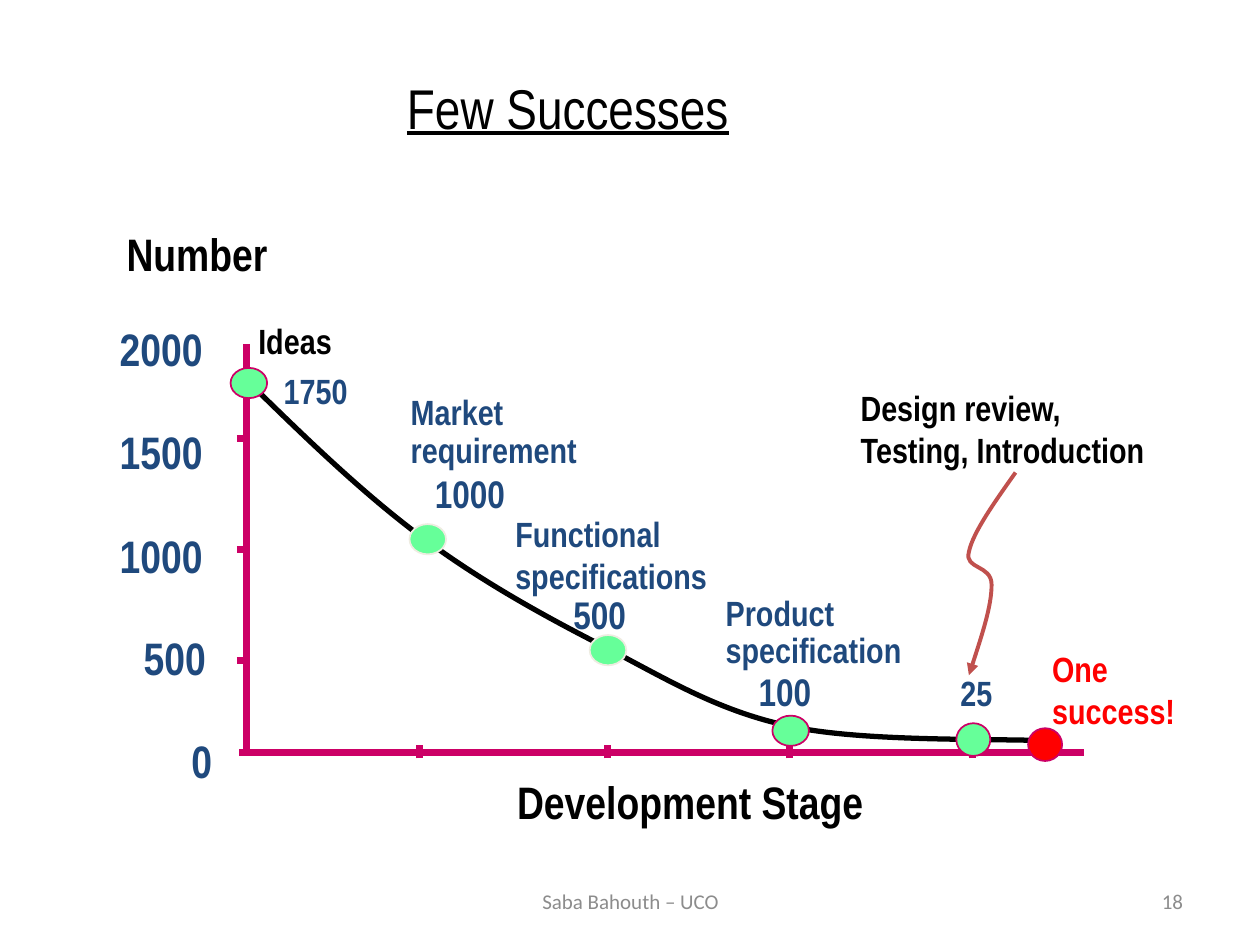
import pptx
import pptx.dml.color
import pptx.enum.shapes
import pptx.enum.text
import pptx.oxml.ns
import pptx.util
from lxml import etree

PX = 9144
NARROW = "Arial Narrow"
BLACK, NAVY, RED = "000000", "1F497D", "FF0000"
MAGENTA, GREEN, CREAM = "CC0066", "66FF99", "EEECE1"
BRICK, GREY = "C0504D", "8C8C8C"
ALIGN = pptx.enum.text.PP_ALIGN
ANCHOR = pptx.enum.text.MSO_ANCHOR
LABELS = [
    ((144, 341, 416, 49), ["Development Stage"], 26, BLACK, ALIGN.CENTER, 0.9, True),
    ((-131, -94, 183, 49), ["Number"], 26, BLACK, ALIGN.CENTER, 0.9, True),
    ((138, 95, 78, 46), ["1000"], 22, NAVY, ALIGN.CENTER, 1, False),
    ((119, 36, 176, 68), ["Market requirement"], 20, NAVY, ALIGN.LEFT, 0.9, True),
    ((476, 29, 301, 75), ["Design review,", "Testing, Introduction"], 20, BLACK, ALIGN.LEFT, 1, True),
    ((555, 255, 48, 43), ["25"], 20, NAVY, ALIGN.CENTER, 1, False),
    ((-2, -24, 80, 43), ["Ideas"], 20, BLACK, ALIGN.LEFT, 1, False),
    ((18, 15, 73, 43), ["1750"], 20, NAVY, ALIGN.CENTER, 1, False),
    ((369, 195, 176, 68), ["Product specification"], 20, NAVY, ALIGN.LEFT, 0.9, True),
    ((395, 252, 64, 46), ["100"], 22, NAVY, ALIGN.CENTER, 1, False),
    ((202, 129, 194, 75), ["Functional specifications"], 20, NAVY, ALIGN.LEFT, 1, True),
    ((628, 236, 130, 75), ["One success!"], 20, RED, ALIGN.LEFT, 1, True),
    ((248, 191, 83, 47), ["500"], 22, NAVY, ALIGN.LEFT, 1, True),
]
DOTS = [
    ((563, 301, 27, 26), GREEN, MAGENTA),
    ((417, 295, 29, 24), GREEN, MAGENTA),
    ((129, 143, 29, 24), GREEN, CREAM),
    ((-13, 19, 29, 24), GREEN, MAGENTA),
    ((272, 231, 29, 24), GREEN, CREAM),
    ((620, 305, 27, 26), RED, MAGENTA),
]
TREND = [(-2, 27), (44, 72), (89, 116), (137, 152), (185, 188), (236, 216), (285, 241),
         (335, 267), (375, 292), (434, 304), (492, 316), (595, 313), (637, 315)]
POINTER = [(610, 102), (593, 126), (576, 150), (573, 165), (569, 179), (591, 175),
           (591, 191), (591, 208), (582, 235), (573, 263)]


def color(value):
    """Turn a hex string into a colour."""
    return pptx.dml.color.RGBColor.from_string(value)


def place(box, part):
    """Return the EMU frame of a part given relative to a box."""
    left, top, width, height = part
    return [v * PX for v in (box[0] + left, box[1] + top, width, height)]


def write(shape, lines, size, ink, align=ALIGN.LEFT, spacing=1, wrap=True,
          font=NARROW, bold=True, underline=False, anchor=ANCHOR.TOP):
    """Fill a shape with formatted paragraphs."""
    frame = shape.text_frame
    frame.word_wrap = wrap
    frame.auto_size = pptx.enum.text.MSO_AUTO_SIZE.NONE
    frame.vertical_anchor = anchor
    frame.margin_left = frame.margin_right = 11 * PX
    frame.margin_top = frame.margin_bottom = 5 * PX
    for index, line in enumerate(lines):
        para = frame.add_paragraph() if index else frame.paragraphs[0]
        para.alignment = align
        para.line_spacing = spacing
        span = para.add_run()
        span.text = line
        span.font.name = font
        span.font.size = pptx.util.Pt(size)
        span.font.bold = bold
        span.font.underline = underline
        span.font.color.rgb = color(ink)


def add_text(slide, box, part, *args, **kwargs):
    """Add a text box inside a box."""
    write(slide.shapes.add_textbox(*place(box, part)), *args, **kwargs)


def add_line(slide, box, x1, y1, x2, y2):
    """Add a straight axis stroke inside a box."""
    left, top = box[:2]
    line = slide.shapes.add_connector(
        pptx.enum.shapes.MSO_CONNECTOR.STRAIGHT,
        (left + x1) * PX, (top + y1) * PX, (left + x2) * PX, (top + y2) * PX)
    line.line.color.rgb = color(MAGENTA)
    line.line.width = pptx.util.Pt(4)
    etree.SubElement(line.element.spPr, pptx.oxml.ns.qn("a:effectLst"))


def add_curve(slide, box, points, ink, width, arrow=False):
    """Add an open curve whose points are a start and Bezier triples."""
    qn = pptx.oxml.ns.qn
    start, *rest = [((box[0] + x) * PX, (box[1] + y) * PX) for x, y in points]
    builder = slide.shapes.build_freeform(*start)
    builder.add_line_segments(rest, close=False)
    curve = builder.convert_to_shape()
    curve.shadow.inherit = False
    curve.fill.background()
    curve.line.color.rgb = color(ink)
    curve.line.width = pptx.util.Pt(width)
    segments = list(curve.element.iter(qn("a:lnTo")))
    for first in range(0, len(segments), 3):
        bezier = etree.SubElement(segments[first].getparent(), qn("a:cubicBezTo"))
        for segment in segments[first:first + 3]:
            bezier.append(segment[0])
            segment.getparent().remove(segment)
    if arrow:
        outline = curve.element.spPr.find(qn("a:ln"))
        etree.SubElement(outline, qn("a:tailEnd"), type="triangle")


def add_title(slide, box):
    """Place the slide title."""
    title = slide.shapes.title
    title.left, title.top, title.width, title.height = place(box, (0, 0, *box[2:]))
    write(title, ["Few Successes"], 32, BLACK, wrap=False, bold=False, underline=True)


def add_axes(slide, box):
    """Draw both axes with their ticks and the value scale."""
    width, height = box[2:]
    add_line(slide, box, 0, 0, 0, height - 2)
    add_line(slide, box, -6, height, width, height)
    for x in (137, 286, 431, 576):
        add_line(slide, box, x, height + 5, x, height - 6)
    for row in range(3):
        add_line(slide, box, -8, 75 + 88 * row, -3, 75 + 88 * row)
    scale = [("2000", -112), ("1500", -112), ("1000", -112), ("500", -93), ("0", -55)]
    for row, (value, left) in enumerate(scale):
        part = (left, -23 + round(81.75 * row), 90, 53)
        add_text(slide, box, part, [value], 26, NAVY, wrap=True)


def add_stages(slide, box):
    """Draw the falling curve, its dots, the labels and the pointer."""
    add_curve(slide, box, TREND, BLACK, 3)
    for part, fill, outline in DOTS:
        dot = slide.shapes.add_shape(pptx.enum.shapes.MSO_SHAPE.OVAL, *place(box, part))
        dot.shadow.inherit = False
        dot.fill.solid()
        dot.fill.fore_color.rgb = color(fill)
        dot.line.color.rgb = color(outline)
        dot.line.width = pptx.util.Pt(1)
    for part, *style in LABELS:
        add_text(slide, box, part, *style)
    add_curve(slide, box, POINTER, BRICK, 2.25, arrow=True)


def add_footer(slide, box):
    """Place the credit and the slide number."""
    style = dict(font="Calibri", bold=False, anchor=ANCHOR.MIDDLE)
    add_text(slide, box, (375, 0, 233, 40), ["18"], 12, GREY, ALIGN.RIGHT, **style)
    add_text(slide, box, (0, 0, 317, 40), ["Saba Bahouth – UCO"], 12, GREY, ALIGN.CENTER, **style)


def main():
    """Build and save the deck."""
    deck = pptx.Presentation()
    deck.slide_width, deck.slide_height = 1000 * PX, 750 * PX
    slide = deck.slides.add_slide(deck.slide_layouts[5])
    plot = (196, 273, 664, 324)
    add_title(slide, (312, 53, 280, 65))
    add_axes(slide, plot)
    add_stages(slide, plot)
    add_footer(slide, (342, 695, 608, 40))
    deck.save("out.pptx")


if __name__ == "__main__":
    main()
